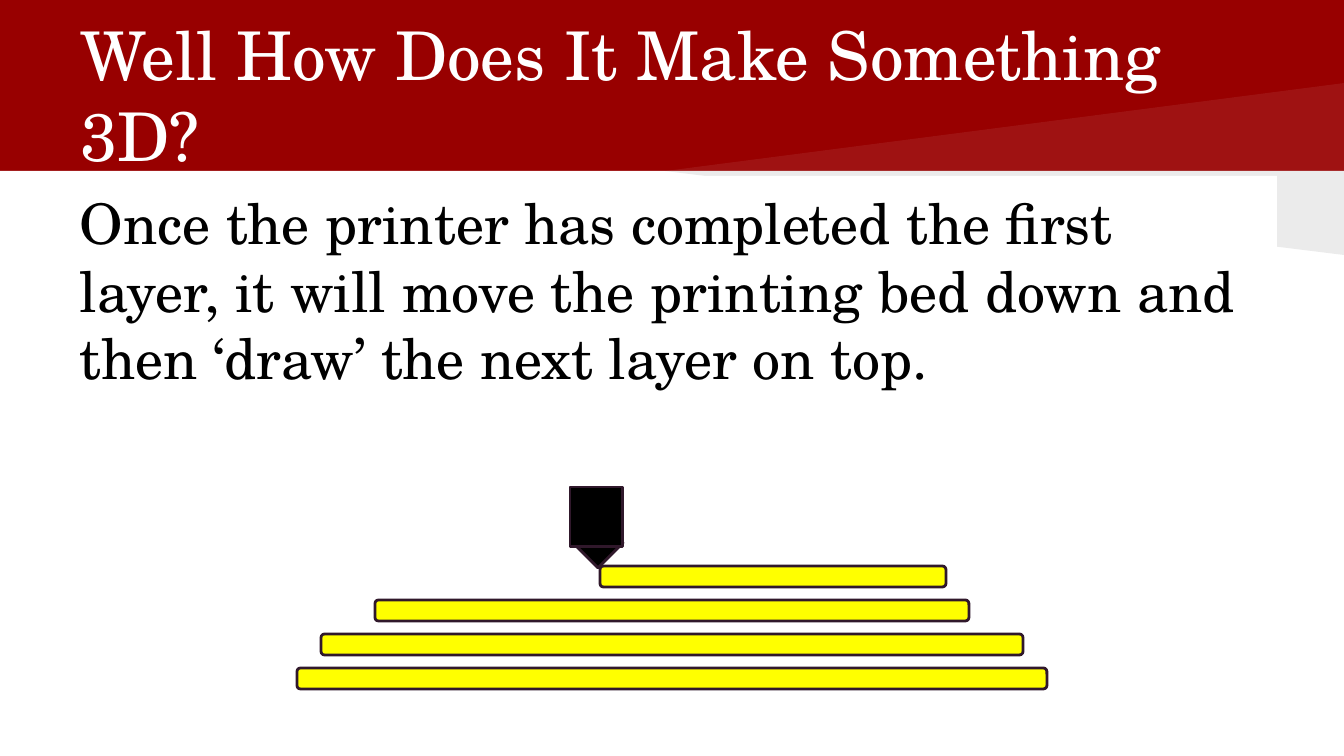
from lxml import etree
from pptx import Presentation
from pptx.dml.color import RGBColor
from pptx.enum.shapes import MSO_SHAPE
from pptx.enum.text import MSO_ANCHOR, MSO_AUTO_SIZE, PP_ALIGN
from pptx.oxml.ns import qn
from pptx.util import Emu, Pt

RECT, ROUNDED, DOWN_ARROW = MSO_SHAPE.RECTANGLE, MSO_SHAPE.ROUNDED_RECTANGLE, MSO_SHAPE.DOWN_ARROW
TOP, MIDDLE = MSO_ANCHOR.TOP, MSO_ANCHOR.MIDDLE

RED = RGBColor(0x98, 0x00, 0x00)
WHITE = RGBColor(0xFF, 0xFF, 0xFF)
BLACK = RGBColor(0x00, 0x00, 0x00)
YELLOW = RGBColor(0xFF, 0xFF, 0x00)
OUTLINE = RGBColor(0x30, 0x18, 0x2B)
FONT = "TeX Gyre Schola"

TITLE = "Well How Does It Make Something 3D?"
BODY = ("Once the printer has completed the first layer, it will move the printing bed "
        "down and then ‘draw’ the next layer on top.")

# All lengths are px
WIDTH, HEIGHT = 1344, 756
HEADER_BOTTOM = 171
WEDGE_LEFT = 665
WEDGES = [(83, WHITE, 7), (255, BLACK, 8)]  # y at the right edge, colour, opacity %
TITLE_BOX = (67, 31, 1210, 126)
BODY_BOX = (67, 176, 1210, 547)
LAYERS = [(297, 750), (321, 702), (375, 594), (600, 346)]  # left, width, bottom up
LAYER_TOP, LAYER_STEP, LAYER_HEIGHT = 668, 34, 21
NOZZLE = [(DOWN_ARROW, (573, 503, 50, 65)), (RECT, (570, 487, 53, 60))]
INSET = 13


def px(n):
    return Emu(round(n * 914400 / 134.4))


def add_block(shapes, kind, box, fill, outlined=True):
    sp = shapes.add_shape(kind, *map(px, box))
    sp.shadow.inherit = False
    sp.fill.solid()
    sp.fill.fore_color.rgb = fill
    if outlined:
        sp.line.color.rgb = OUTLINE
        sp.line.width = Pt(1.5)
    else:
        sp.line.fill.background()
    return sp


def add_wedge(shapes, edge_y, color, opacity):
    builder = shapes.build_freeform(px(WEDGE_LEFT), px(HEADER_BOTTOM))
    builder.add_line_segments([(px(WIDTH), px(HEADER_BOTTOM)), (px(WIDTH), px(edge_y))])
    sp = builder.convert_to_shape()
    sp.shadow.inherit = False
    sp.line.fill.background()
    sp.fill.solid()
    sp.fill.fore_color.rgb = color
    clr = sp.fill._xPr.find(qn("a:solidFill"))[0]
    etree.SubElement(clr, qn("a:alpha"), val=str(opacity * 1000))


def set_text(sp, text, size, color, anchor):
    tf = sp.text_frame
    frame_format = {"word_wrap": True, "auto_size": MSO_AUTO_SIZE.NONE,
                    "vertical_anchor": anchor}
    for side in ("left", "right", "top", "bottom"):
        frame_format["margin_" + side] = px(INSET)
    for name, value in frame_format.items():
        setattr(tf, name, value)
    p = tf.paragraphs[0]
    p.alignment = PP_ALIGN.LEFT
    r = p.add_run()
    r.text = text
    r.font.name = FONT
    r.font.size = Pt(size)
    r.font.color.rgb = color


prs = Presentation()
prs.slide_width, prs.slide_height = px(WIDTH), px(HEIGHT)
s = prs.slides.add_slide(prs.slide_layouts[5])
s.background.fill.solid()
s.background.fill.fore_color.rgb = RED
shapes = s.shapes

add_block(shapes, RECT, (0, HEADER_BOTTOM, WIDTH, HEIGHT - HEADER_BOTTOM), WHITE, outlined=False)
for wedge in WEDGES:
    add_wedge(shapes, *wedge)

title = shapes.title
for name, value in zip(("left", "top", "width", "height"), TITLE_BOX):
    setattr(title, name, px(value))
set_text(title, TITLE, 36, WHITE, MIDDLE)
shapes._spTree.append(title._element)  # in front of the wedges

body = shapes.add_textbox(*map(px, BODY_BOX))
body.fill.solid()
body.fill.fore_color.rgb = WHITE
set_text(body, BODY, 30, BLACK, TOP)

for i, (left, width) in enumerate(LAYERS):
    box = (left, LAYER_TOP - i * LAYER_STEP, width, LAYER_HEIGHT)
    add_block(shapes, ROUNDED, box, YELLOW)
for kind, box in NOZZLE:
    add_block(shapes, kind, box, BLACK)

prs.save("out.pptx")
